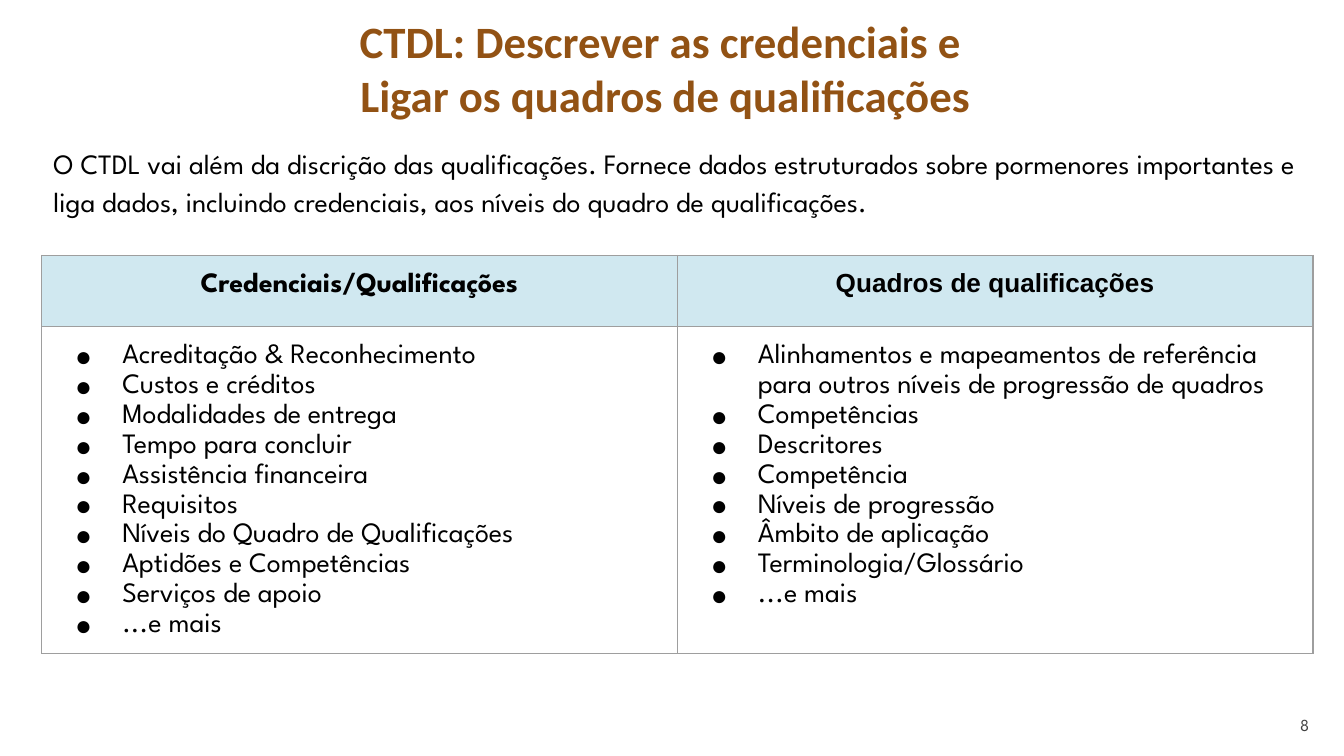
"""Build the CTDL slide on credentials and qualification frameworks."""
from copy import deepcopy

from lxml.etree import SubElement as Sub
from pptx import Presentation
from pptx.dml.color import RGBColor
from pptx.enum.text import MSO_ANCHOR as Anchor, MSO_AUTO_SIZE as Auto, PP_ALIGN as Align
from pptx.oxml.ns import qn
from pptx.util import Inches, Pt

SPARTAN = "League Spartan"
TEXT = dict(name=SPARTAN, size=Pt(15), bold=False)
SIDES = ("left", "top", "right", "bottom")


def rgb(value):
    return RGBColor.from_string(value)


def write(p, text, font, color="000000", **layout):
    for key, value in layout.items():
        setattr(p, key, value)
    p.text = text
    for r in p.runs:
        for key, value in font.items():
            setattr(r.font, key, value)
        r.font.color.rgb = rgb(color)
    for br in p._p.findall(qn("a:br")):
        br.append(deepcopy(p.runs[0]._r.rPr))


prs = Presentation()
prs.slide_width = Inches(10)
prs.slide_height = prs.slide_width * 9 // 16
s = prs.slides.add_slide(prs.slide_layouts[5])

title = s.shapes.title
title.left, title.top, title.width, title.height = map(Inches, (0.13, 0, 9.64, 0.66))
intro = s.shapes.add_textbox(*map(Inches, (0.3, 0.95, 9.54, 0.76)))
number = s.shapes.add_textbox(*map(Inches, (9.24, 5.18, 0.6, 0.43)))
for sp, anchor in ((title, Anchor.TOP), (intro, Anchor.TOP), (number, Anchor.MIDDLE)):
    frame = dict(word_wrap=True, auto_size=Auto.NONE, vertical_anchor=anchor)
    frame |= {f"margin_{side}": Inches(0.1) for side in SIDES}
    for key, value in frame.items():
        setattr(sp.text_frame, key, value)

write(title.text_frame.paragraphs[0],
      "CTDL: Descrever as credenciais e \vLigar os quadros de qualificações",
      dict(name="Calibri", size=Pt(24), bold=True), "925214", alignment=Align.CENTER)
write(intro.text_frame.paragraphs[0],
      "O CTDL vai além da discrição das qualificações. Fornece dados estruturados sobre "
      "pormenores importantes e liga dados, incluindo credenciais, aos níveis do quadro "
      "de qualificações.", TEXT, line_spacing=1.15)
write(number.text_frame.paragraphs[0], "8", dict(name=SPARTAN, size=Pt(9)), "424242",
      alignment=Align.RIGHT)

columns = [
    ("Credenciais/Qualificações", dict(name=SPARTAN, size=Pt(15), bold=True), 1.15, [
        "Acreditação & Reconhecimento", "Custos e créditos", "Modalidades de entrega",
        "Tempo para concluir", "Assistência financeira", "Requisitos",
        "Níveis do Quadro de Qualificações", "Aptidões e Competências",
        "Serviços de apoio", "...e mais"]),
    ("Quadros de qualificações", dict(name="Arial", size=Pt(14), bold=True), 1.0, [
        "Alinhamentos e mapeamentos de referência para outros níveis de progressão de quadros",
        "Competências", "Descritores", "Competência", "Níveis de progressão",
        "Âmbito de aplicação", "Terminologia/Glossário", "...e mais"]),
]
table = s.shapes.add_table(2, 2, *map(Inches, (0.31, 1.9, 9.46, 2.96))).table
table.horz_banding = False
table.rows[0].height, table.rows[1].height = Inches(0.53), Inches(2.43)

for col, (heading, font, spacing, items) in enumerate(columns):
    for row, fill in enumerate(("D0E8F0", "FFFFFF")):
        cell = table.cell(row, col)
        for side in SIDES:
            setattr(cell, f"margin_{side}", Inches(0.1))
        for edge in ("lnL", "lnR", "lnT", "lnB"):
            ln = Sub(cell._tc.get_or_add_tcPr(), qn(f"a:{edge}"), w=str(Pt(0.75)))
            Sub(Sub(ln, qn("a:solidFill")), qn("a:srgbClr"), val="9E9E9E")
        cell.fill.solid()
        cell.fill.fore_color.rgb = rgb(fill)

    write(table.cell(0, col).text_frame.paragraphs[0], heading, font,
          alignment=Align.CENTER, line_spacing=spacing)
    tf = table.cell(1, col).text_frame
    for i, item in enumerate(items):
        p = tf.add_paragraph() if i else tf.paragraphs[0]
        pPr = p._p.get_or_add_pPr()
        pPr.set("marL", str(Inches(0.5)))
        pPr.set("indent", str(Inches(-0.35)))
        Sub(Sub(pPr, qn("a:buClr")), qn("a:srgbClr"), val="000000")
        Sub(pPr, qn("a:buFont"), typeface="Arial")
        Sub(pPr, qn("a:buChar"), char="●")
        write(p, item, TEXT, line_spacing=1.15)

prs.save("out.pptx")
